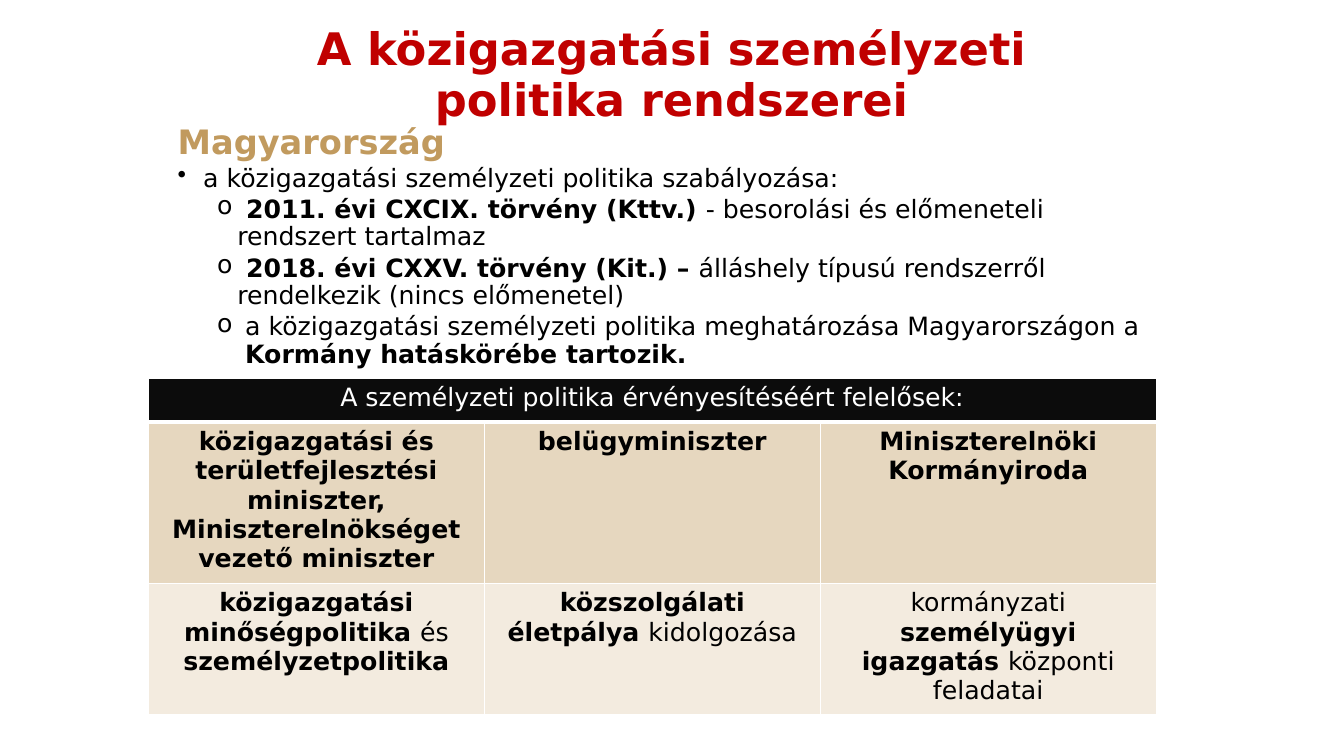
"""Builds the slide on the personnel policy systems of public administration."""
from dataclasses import dataclass

from lxml.etree import SubElement
from pptx import Presentation
from pptx.dml.color import RGBColor
from pptx.enum.text import MSO_ANCHOR, MSO_AUTO_SIZE, PP_ALIGN
from pptx.oxml import parse_xml
from pptx.oxml.ns import nsdecls, qn
from pptx.util import Cm, Pt

FONT = "DejaVu Sans"
BLACK, WHITE, RED, GOLD = "000000", "FFFFFF", "C00000", "C19A5E"


@dataclass
class Span:
    """A stretch of text in one weight."""
    text: str
    bold: bool = False


@dataclass
class Item:
    """A body paragraph with its bullet and indents in centimetres."""
    spans: list[Span]
    bullet: str = ""
    margin: float = 0
    hanging: float = 0
    size: float = 18
    color: str = BLACK


@dataclass
class Row:
    """A table row with its look and one list of spans per cell."""
    height: float
    fill: str
    color: str
    cells: list[list[Span]]
    bottom: float = 1


TITLE = ["A közigazgatási személyzeti", "politika rendszerei"]

ITEMS = [
    Item([Span("Magyarország", True)], size=24, color=GOLD),
    Item([Span("a közigazgatási személyzeti politika szabályozása:")], "•", 0.64, 0.64),
    Item([Span(" 2011. évi CXCIX. törvény (Kttv.) ", True),
          Span("- besorolási és előmeneteli rendszert tartalmaz")], "o", 1.5, 0.51),
    Item([Span(" 2018. évi CXXV. törvény (Kit.) – ", True),
          Span("álláshely típusú rendszerről rendelkezik (nincs előmenetel)")], "o", 1.5, 0.51),
    Item([Span("a közigazgatási személyzeti politika meghatározása Magyarországon a "),
          Span("Kormány hatáskörébe tartozik.", True)], "o", 1.7, 0.71),
]

ROWS = [
    Row(1.11, "0C0C0C", WHITE,
        [[Span("A személyzeti politika érvényesítéséért felelősek:")]], bottom=3),
    Row(3.93, "E6D7BF", BLACK, [
        [Span("közigazgatási és területfejlesztési miniszter, "
              "Miniszterelnökséget vezető miniszter", True)],
        [Span("belügyminiszter", True)],
        [Span("Miniszterelnöki Kormányiroda", True)],
    ]),
    Row(3.2, "F3EBDF", BLACK, [
        [Span("közigazgatási minőségpolitika ", True), Span("és "),
         Span("személyzetpolitika", True)],
        [Span("közszolgálati életpálya ", True), Span("kidolgozása")],
        [Span("kormányzati "), Span("személyügyi igazgatás ", True),
         Span("központi feladatai")],
    ]),
]


def rgb(color: str) -> RGBColor:
    """Turn a hex string into a colour."""
    return RGBColor.from_string(color)


def add_spans(p, spans: list[Span], size: float, color: str) -> None:
    """Add the spans to a paragraph as runs."""
    for span in spans:
        r = p.add_run()
        r.text = span.text
        r.font.name = FONT
        r.font.size = Pt(size)
        r.font.bold = span.bold
        r.font.color.rgb = rgb(color)


def next_paragraph(tf, index: int):
    """Give the first paragraph of a frame, or a new one after it."""
    return tf.add_paragraph() if index else tf.paragraphs[0]


def draw_title(s) -> None:
    """Place and fill the title placeholder."""
    sp = s.shapes.title
    sp.left, sp.top, sp.width, sp.height = Cm(4.23), Cm(0), Cm(25.4), Cm(3.73)
    tf = sp.text_frame
    tf.auto_size = MSO_AUTO_SIZE.NONE
    tf.vertical_anchor = MSO_ANCHOR.MIDDLE
    for i, line in enumerate(TITLE):
        p = next_paragraph(tf, i)
        p.alignment = PP_ALIGN.CENTER
        p.line_spacing = Pt(37)
        add_spans(p, [Span(line, True)], 32, RED)


def draw_body(s) -> None:
    """Write the bulleted list."""
    sp = s.shapes.add_textbox(Cm(4.23), Cm(2.92), Cm(24.9), Cm(16.13))
    tf = sp.text_frame
    tf.word_wrap = True
    tf.margin_top = Cm(0.23)
    for i, item in enumerate(ITEMS):
        p = next_paragraph(tf, i)
        if item.bullet:
            pPr = p._p.get_or_add_pPr()
            pPr.set("marL", str(Cm(item.margin)))
            pPr.set("indent", str(-Cm(item.hanging)))
            SubElement(pPr, qn("a:buChar")).set("char", item.bullet)
        p.line_spacing = 0.9
        if i:
            p.space_before = Pt(3)
        add_spans(p, item.spans, item.size, item.color)


def set_borders(cell, bottom: float) -> None:
    """Give a cell thin white borders and its own bottom width."""
    tcPr = cell._tc.get_or_add_tcPr()
    for side, width in zip("LRTB", (1, 1, 1, bottom)):
        tcPr.append(parse_xml(
            f'<a:ln{side} {nsdecls("a")} w="{Pt(width)}"><a:solidFill>'
            f'<a:srgbClr val="{WHITE}"/></a:solidFill></a:ln{side}>'))


def draw_table(s) -> None:
    """Draw the table of those responsible."""
    height = sum(row.height for row in ROWS)
    frame = s.shapes.add_table(len(ROWS), 3, Cm(3.74), Cm(9.53), Cm(25.4), Cm(height))
    table = frame.table
    table.first_row = table.horz_banding = False
    table.cell(0, 0).merge(table.cell(0, 2))
    for i, row in enumerate(ROWS):
        table.rows[i].height = Cm(row.height)
        for cell in table.rows[i].cells:
            set_borders(cell, row.bottom)
            cell.fill.solid()
            cell.fill.fore_color.rgb = rgb(row.fill)
        for j, spans in enumerate(row.cells):
            p = table.cell(i, j).text_frame.paragraphs[0]
            p.alignment = PP_ALIGN.CENTER
            add_spans(p, spans, 18, row.color)


def main() -> None:
    """Build and save the presentation."""
    prs = Presentation()
    prs.slide_width, prs.slide_height = Cm(33.87), Cm(19.05)
    s = prs.slides.add_slide(prs.slide_layouts[5])
    draw_title(s)
    draw_body(s)
    draw_table(s)
    prs.save("out.pptx")


if __name__ == "__main__":
    main()
